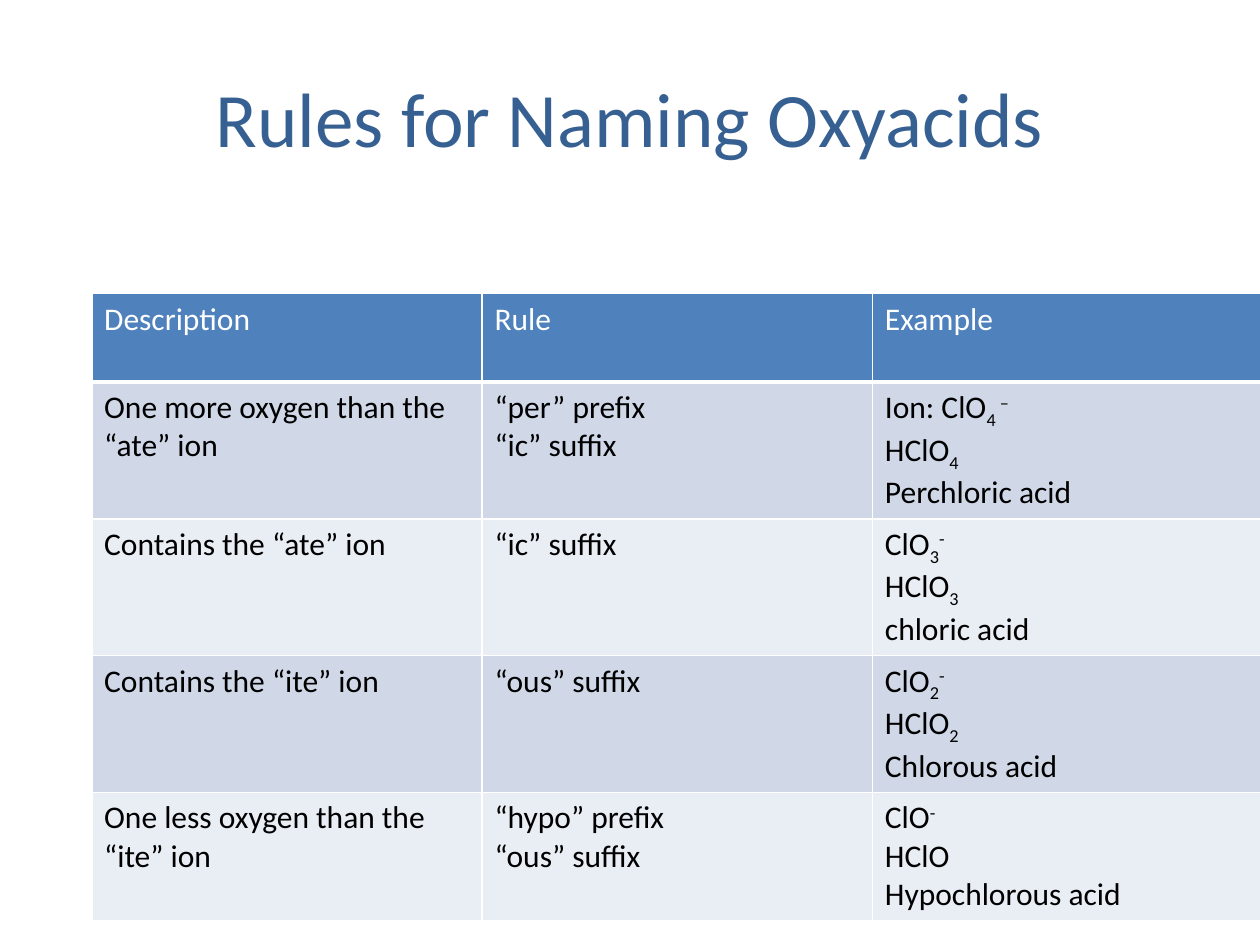
from dataclasses import dataclass

from lxml.etree import SubElement
from pptx import Presentation
from pptx.dml.color import RGBColor
from pptx.enum.text import MSO_ANCHOR, PP_ALIGN
from pptx.oxml.ns import qn
from pptx.util import Cm, Pt

COLORS = {
    "title": "376092",
    "header": "4F81BD",
    "header_text": "FFFFFF",
    "text": "000000",
    "odd_row": "D0D8E8",
    "even_row": "E9EDF4",
    "border": "FFFFFF",
}
SUBSCRIPT, SUPERSCRIPT = -25, 30
COLUMN_WIDTH = Cm(7.87)
HEADER_HEIGHT, ROW_HEIGHT = Cm(1.78), Cm(2.54)
MARGINS = {
    "margin_left": Cm(0.25),
    "margin_right": Cm(0.25),
    "margin_top": Cm(0.13),
    "margin_bottom": Cm(0.13),
}


@dataclass(frozen=True)
class Piece:
    text: str
    baseline: int = 0


Line = tuple[Piece, ...]


@dataclass(frozen=True)
class NamingRule:
    description: str
    rules: tuple[str, ...]
    ion: Line
    acid: Line
    acid_name: str

    def cells(self) -> list[list[Line]]:
        return [
            [(Piece(self.description),)],
            [(Piece(rule),) for rule in self.rules],
            [self.ion, self.acid, (Piece(self.acid_name),)],
        ]


def ion(start: str, count: str = "", charge: str = "-") -> Line:
    pieces = (Piece(start), Piece(count, SUBSCRIPT), Piece(charge, SUPERSCRIPT))
    return tuple(piece for piece in pieces if piece.text)


HEADINGS = ("Description", "Rule", "Example")
NAMING_RULES = (
    NamingRule("One more oxygen than the “ate” ion", ("“per” prefix", "“ic” suffix"),
               ion("Ion: ClO", "4 ", "–"), ion("HClO", "4", ""), "Perchloric acid"),
    NamingRule("Contains the “ate” ion", ("“ic” suffix",),
               ion("ClO", "3"), ion("HClO", "3", ""), "chloric acid"),
    NamingRule("Contains the “ite” ion", ("“ous” suffix",),
               ion("ClO", "2"), ion("HClO", "2", ""), "Chlorous acid"),
    NamingRule("One less oxygen than the “ite” ion", ("“hypo” prefix", "“ous” suffix"),
               ion("ClO"), ion("HClO", "", ""), "Hypochlorous acid"),
)


def format_font(font, size: int, color: str) -> None:
    for name, value in {"name": "Calibri", "size": Pt(size), "bold": False}.items():
        setattr(font, name, value)
    font.color.rgb = RGBColor.from_string(COLORS[color])


def add_borders(cell, bottom_width: int) -> None:
    properties = cell._tc.get_or_add_tcPr()
    widths = {"lnL": 1, "lnR": 1, "lnT": 1, "lnB": bottom_width}
    for position, (tag, width) in enumerate(widths.items()):
        border = SubElement(properties, qn(f"a:{tag}"), w=str(Pt(width)))
        fill = SubElement(border, qn("a:solidFill"))
        SubElement(fill, qn("a:srgbClr"), val=COLORS["border"])
        properties.insert(position, border)


def fill_cell(cell, lines: list[Line], fill: str, color: str, bottom_width: int) -> None:
    for name, value in MARGINS.items():
        setattr(cell, name, value)
    cell.fill.solid()
    cell.fill.fore_color.rgb = RGBColor.from_string(COLORS[fill])
    add_borders(cell, bottom_width)
    frame = cell.text_frame
    for index, line in enumerate(lines):
        paragraph = frame.add_paragraph() if index else frame.paragraphs[0]
        for piece in line:
            run = paragraph.add_run()
            run.text = piece.text
            format_font(run.font, 18, color)
            if piece.baseline:
                run._r.get_or_add_rPr().set("baseline", str(piece.baseline * 1000))


def add_title(slide, text: str) -> None:
    title = slide.shapes.title
    place = {"left": Cm(1.27), "top": Cm(0.76), "width": Cm(22.86), "height": Cm(3.18)}
    for name, value in place.items():
        setattr(title, name, value)
    title.text_frame.text = text
    title.text_frame.vertical_anchor = MSO_ANCHOR.MIDDLE
    paragraph = title.text_frame.paragraphs[0]
    paragraph.alignment = PP_ALIGN.CENTER
    format_font(paragraph.runs[0].font, 44, "title")


def add_rules_table(slide) -> None:
    rows = [[[(Piece(heading),)] for heading in HEADINGS]]
    rows += [rule.cells() for rule in NAMING_RULES]
    table = slide.shapes.add_table(
        len(rows), len(HEADINGS), Cm(1.85), Cm(5.92),
        COLUMN_WIDTH * len(HEADINGS), HEADER_HEIGHT + ROW_HEIGHT * len(NAMING_RULES),
    ).table
    for column in table.columns:
        column.width = COLUMN_WIDTH
    for row_index, row in enumerate(rows):
        is_header = row_index == 0
        table.rows[row_index].height = HEADER_HEIGHT if is_header else ROW_HEIGHT
        band = "odd_row" if row_index % 2 else "even_row"
        style = ("header", "header_text", 3) if is_header else (band, "text", 1)
        for column_index, lines in enumerate(row):
            fill_cell(table.cell(row_index, column_index), lines, *style)


def main() -> None:
    presentation = Presentation()
    presentation.slide_width = Cm(25.4)
    presentation.slide_height = Cm(19.05)
    slide = presentation.slides.add_slide(presentation.slide_layouts[5])
    add_title(slide, "Rules for Naming Oxyacids")
    add_rules_table(slide)
    presentation.save("out.pptx")


if __name__ == "__main__":
    main()
